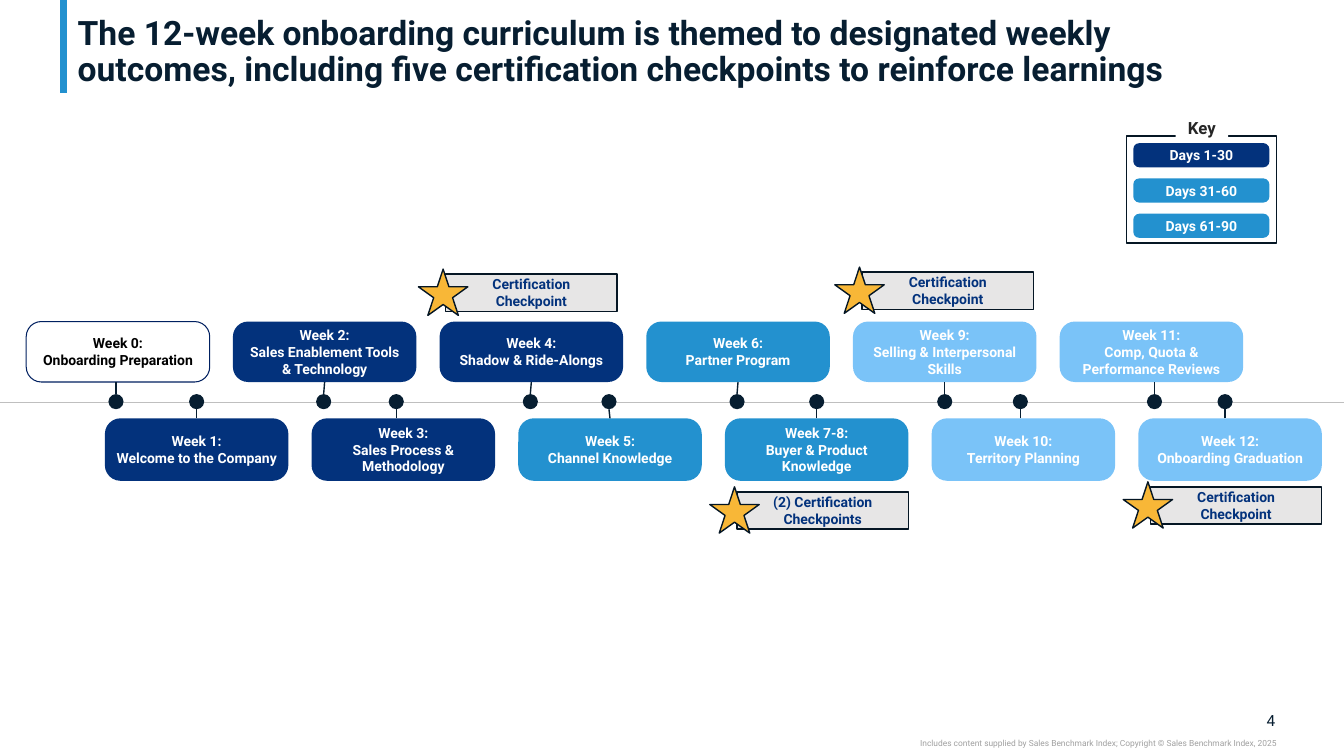
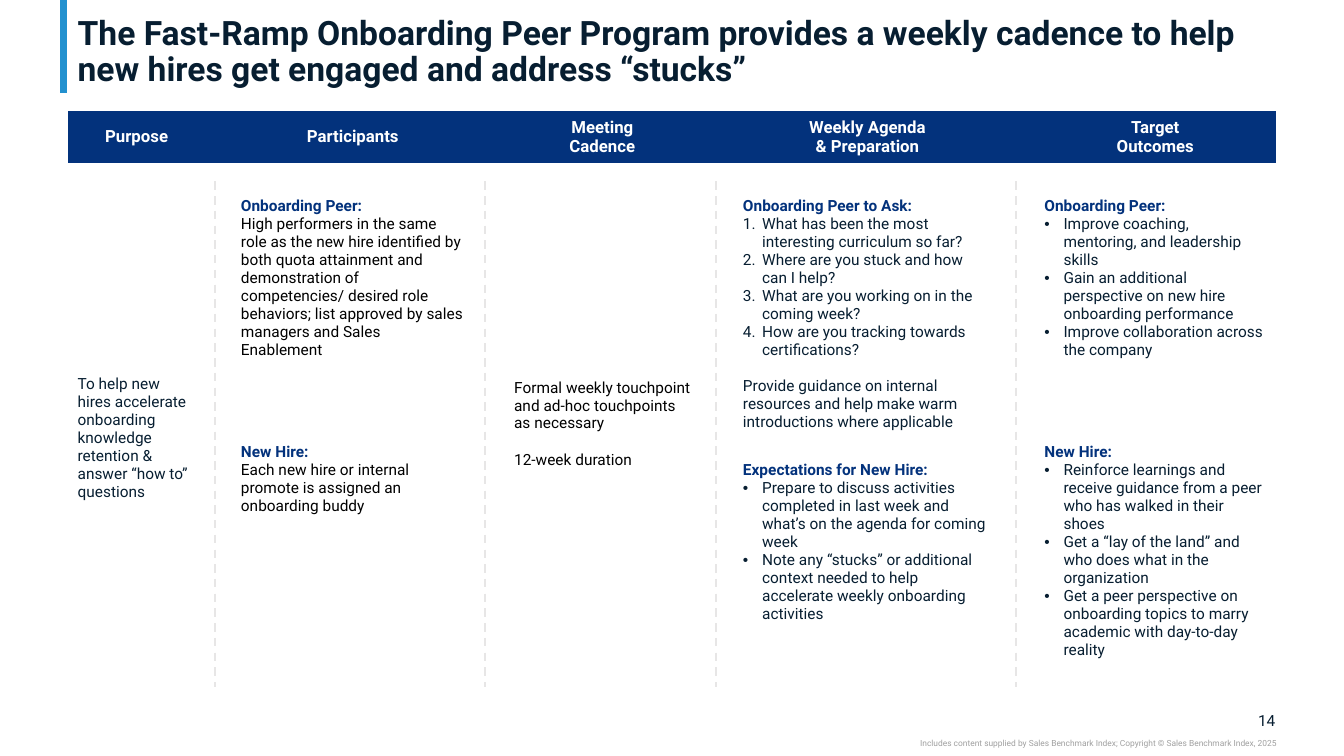
from lxml import etree
from pptx import Presentation
from pptx.dml.color import RGBColor
from pptx.enum.dml import MSO_LINE
from pptx.enum.shapes import MSO_CONNECTOR, MSO_SHAPE
from pptx.enum.text import MSO_ANCHOR, MSO_AUTO_SIZE, PP_ALIGN
from pptx.oxml.ns import qn
from pptx.util import Inches, Pt

NAVY = RGBColor(0x03, 0x32, 0x7C)
BLUE = RGBColor(0x23, 0x91, 0xCF)
SKY = RGBColor(0x7A, 0xC3, 0xF8)
INK = RGBColor(0x07, 0x1E, 0x31)
OUTLINE = RGBColor(0x05, 0x16, 0x24)
CARD_EDGE = RGBColor(0x00, 0x20, 0x60)
CHARCOAL = RGBColor(0x26, 0x26, 0x26)
GOLD = RGBColor(0xF8, 0xB7, 0x37)
PALE = RGBColor(0xE7, 0xE6, 0xE6)
SILVER = RGBColor(0xBF, 0xBF, 0xBF)
GREY = RGBColor(0xA0, 0xA0, 0xA0)
WHITE = RGBColor(0xFF, 0xFF, 0xFF)
BLACK = RGBColor(0x00, 0x00, 0x00)

FONT = "Roboto"
TOP, MIDDLE, BOTTOM = MSO_ANCHOR.TOP, MSO_ANCHOR.MIDDLE, MSO_ANCHOR.BOTTOM
LEFT, CENTER, RIGHT = PP_ALIGN.LEFT, PP_ALIGN.CENTER, PP_ALIGN.RIGHT
RECTANGLE = MSO_SHAPE.RECTANGLE
ROUNDED = MSO_SHAPE.ROUNDED_RECTANGLE
OVAL, STAR = MSO_SHAPE.OVAL, MSO_SHAPE.STAR_5_POINT
STRAIGHT, DASH = MSO_CONNECTOR.STRAIGHT, MSO_LINE.DASH
NO_AUTOFIT = MSO_AUTO_SIZE.NONE

TITLE_ONLY = 5
PLAIN_TABLE = "{2D5ABB26-0587-4C30-8999-92F81FD0307C}"
COPYRIGHT = ("Includes content supplied by Sales Benchmark Index; "
             "Copyright © Sales Benchmark Index, 2025")
DEFAULT_INSETS = (0.1, 0.05)
CARD_INSETS = (0.07, 0.04)

CARD_PITCH, CARD_WIDTH = 2.05, 1.82
DOT_TOP, DOT_SIZE = 3.91, 0.15
UPPER_WEEKS = [
    ("Week 0:\nOnboarding Preparation", None, 1.15),
    ("Week 2:\nSales Enablement Tools & Technology", NAVY, 3.21),
    ("Week 4:\nShadow & Ride-Alongs", NAVY, 5.26),
    ("Week 6:\nPartner Program", BLUE, 7.31),
    ("Week 9:\nSelling & Interpersonal Skills", SKY, 9.37),
    ("Week 11:\nComp, Quota & Performance Reviews", SKY, 11.45),
]
LOWER_WEEKS = [
    ("Week 1:\nWelcome to the Company", NAVY, 1.95),
    ("Week 3:\nSales Process & Methodology", NAVY, 3.93),
    ("Week 5:\nChannel Knowledge", BLUE, 6.04),
    ("Week 7-8:\nBuyer & Product Knowledge", BLUE, 8.1),
    ("Week 10:\nTerritory Planning", SKY, 10.12),
    ("Week 12:\nOnboarding Graduation", SKY, 12.15),
]
CHECKPOINTS = [
    (4.42, 2.72, "Certification Checkpoint"),
    (8.55, 2.7, "Certification Checkpoint"),
    (7.31, 4.88, "(2) Certification Checkpoints"),
    (11.41, 4.83, "Certification Checkpoint"),
]
KEY = [("Days 1-30", NAVY), ("Days 31-60", BLUE), ("Days 61-90", BLUE)]

COLUMN_WIDTHS = [1.37, 0.25, 2.42, 0.29, 1.95, 0.32, 2.67, 0.32, 2.4]
ROW_HEIGHTS = [0.52, 0.29, 2.44, 2.44]
HEADERS = ["Purpose", "Participants", "Meeting\nCadence",
           "Weekly Agenda\n& Preparation", "Target\nOutcomes"]
DIVIDERS = [2.13, 4.81, 7.1, 10.08]
PROGRAM_CELLS = [
    (1, 4, MIDDLE, BLACK, 0.05, [
        ("body", "Formal weekly touchpoint and ad-hoc touchpoints as necessary"),
        ("spaced", "12-week duration")]),
    (2, 0, MIDDLE, INK, 0.05, [
        ("body", "To help new hires accelerate onboarding knowledge retention "
                 "& answer “how to” questions")]),
    (2, 2, TOP, BLACK, 0.05, [
        ("heading", "Onboarding Peer:"),
        ("body", "High performers in the same role as the new hire identified by "
                 "both quota attainment and demonstration of competencies/ desired "
                 "role behaviors; list approved by sales managers and Sales "
                 "Enablement")]),
    (2, 6, TOP, INK, 0.05, [
        ("heading", "Onboarding Peer to Ask:"),
        ("number", "What has been the most interesting curriculum so far?"),
        ("number", "Where are you stuck and how can I help?"),
        ("number", "What are you working on in the coming week?"),
        ("number", "How are you tracking towards certifications?"),
        ("spaced", "Provide guidance on internal resources and help make warm "
                   "introductions where applicable")]),
    (2, 8, TOP, INK, 0.05, [
        ("heading", "Onboarding Peer:"),
        ("bullet", "Improve coaching, mentoring, and leadership skills"),
        ("bullet", "Gain an additional perspective on new hire onboarding "
                   "performance"),
        ("bullet", "Improve collaboration across the company")]),
    (3, 2, TOP, BLACK, 0.05, [
        ("heading", "New Hire:"),
        ("body", "Each new hire or internal promote is assigned an onboarding "
                 "buddy")]),
    (3, 6, TOP, INK, 0.23, [
        ("heading", "Expectations for New Hire:"),
        ("bullet", "Prepare to discuss activities completed in last week and "
                   "what’s on the agenda for coming week"),
        ("bullet", "Note any “stucks” or additional context needed to help "
                   "accelerate weekly onboarding activities")]),
    (3, 8, TOP, INK, 0.05, [
        ("heading", "New Hire:"),
        ("bullet", "Reinforce learnings and receive guidance from a peer who has "
                   "walked in their shoes"),
        ("bullet", "Get a “lay of the land” and who does what in the "
                   "organization"),
        ("bullet", "Get a peer perspective on onboarding topics to marry academic "
                   "with day-to-day reality")]),
]


class SlideBuilder:
    def __init__(self):
        self.deck = Presentation()
        self.deck.slide_width = Inches(13.33)
        self.deck.slide_height = Inches(7.5)
        self.page = None

    def add_page(self, title, number):
        self.page = self.deck.slides.add_slide(self.deck.slide_layouts[TITLE_ONLY])
        self.line((0.63, 0), (0.63, 0.92), BLUE, 5)
        box = self.page.shapes.title
        box.left, box.top = Inches(0.67), Inches(0.04)
        box.width, box.height = Inches(11.99), Inches(0.84)
        self.set_text(box.text_frame, title, 24, INK, True, LEFT, BOTTOM, (0.1, 0))
        box.text_frame.paragraphs[0].line_spacing = 0.9
        self.label(12.32, 7.05, 0.33, 0.19, number, 11, INK, MIDDLE)
        self.label(7.5, 7.32, 5.16, 0.1, COPYRIGHT, 6, GREY, TOP)

    def style(self, paragraph, size, color, bold):
        for span in paragraph.runs:
            span.font.name = FONT
            span.font.size = Pt(size)
            span.font.bold = bold
            span.font.color.rgb = color

    def set_text(self, frame, text, size, color, bold=True, align=CENTER,
                 anchor=MIDDLE, insets=DEFAULT_INSETS):
        frame.text = text
        frame.word_wrap = True
        frame.auto_size = NO_AUTOFIT
        frame.vertical_anchor = anchor
        frame.margin_left = frame.margin_right = Inches(insets[0])
        frame.margin_top = frame.margin_bottom = Inches(insets[1])
        for para in frame.paragraphs:
            para.alignment = align
            self.style(para, size, color, bold)

    def label(self, left, top, width, height, text, size, color, anchor):
        box = self.page.shapes.add_textbox(
            Inches(left), Inches(top), Inches(width), Inches(height))
        self.set_text(box.text_frame, text, size, color, False, RIGHT, anchor, (0, 0))

    def shape(self, kind, left, top, width, height, fill=None, edge=None,
              edge_width=1, corner=None):
        shape = self.page.shapes.add_shape(
            kind, Inches(left), Inches(top), Inches(width), Inches(height))
        shape.shadow.inherit = False
        if fill is None:
            shape.fill.background()
        else:
            shape.fill.solid()
            shape.fill.fore_color.rgb = fill
        if edge is None:
            shape.line.fill.background()
        else:
            shape.line.color.rgb = edge
            shape.line.width = Pt(edge_width)
        if corner is not None:
            shape.adjustments[0] = corner
        return shape

    def line(self, start, end, color, width, dash=None):
        points = [Inches(value) for value in (*start, *end)]
        line = self.page.shapes.add_connector(STRAIGHT, *points)
        line.line.color.rgb = color
        line.line.width = Pt(width)
        if dash is not None:
            line.line.dash_style = dash
        etree.SubElement(line._element.spPr, qn("a:effectLst"))
        return line

    def card(self, left, top, width, height, text, fill):
        edge, color = (CARD_EDGE, BLACK) if fill is None else (None, WHITE)
        card = self.shape(ROUNDED, left, top, width, height, fill, edge, 0.75, 0.25)
        self.set_text(card.text_frame, text, 10, color, insets=CARD_INSETS)
        return card

    def week_row(self, weeks, left, top, height, upper):
        for index, (text, fill, dot_x) in enumerate(weeks):
            card_left = left + index * CARD_PITCH
            card = self.card(card_left, top, CARD_WIDTH, height, text, fill)
            dot = self.shape(OVAL, dot_x - DOT_SIZE / 2, DOT_TOP,
                             DOT_SIZE, DOT_SIZE, INK)
            card_edge = top + height if upper else top
            dot_edge = DOT_TOP if upper else DOT_TOP + DOT_SIZE
            stem = self.line((dot_x, card_edge), (dot_x, dot_edge), INK, 1)
            if abs(dot_x - card_left - CARD_WIDTH / 2) < 0.02:
                stem.begin_connect(card, 2 if upper else 0)
            if upper:
                stem.end_connect(dot, 0)

    def checkpoint(self, left, top, text):
        box = self.shape(RECTANGLE, left, top, 1.7, 0.37, PALE, OUTLINE)
        self.set_text(box.text_frame, text, 10, NAVY)
        self.shape(STAR, left - 0.27, top - 0.05, 0.49, 0.46, GOLD, OUTLINE)

    def key(self, entries):
        self.shape(RECTANGLE, 11.17, 1.35, 1.49, 1.06, edge=OUTLINE)
        heading = self.shape(RECTANGLE, 11.66, 1.12, 0.52, 0.3, WHITE)
        self.set_text(heading.text_frame, "Key", 12, CHARCOAL, anchor=TOP)
        for index, (text, fill) in enumerate(entries):
            self.card(11.24, 1.42 + index * 0.35, 1.35, 0.24, text, fill)

    def table(self, left, top, widths, heights):
        table = self.page.shapes.add_table(
            len(heights), len(widths), Inches(left), Inches(top),
            Inches(sum(widths)), Inches(sum(heights))).table
        table._tbl.tblPr.find(qn("a:tableStyleId")).text = PLAIN_TABLE
        table.first_row = table.horz_banding = False
        for column, width in zip(table.columns, widths):
            column.width = Inches(width)
        for row, height in zip(table.rows, heights):
            row.height = Inches(height)
        for cell in table.iter_cells():
            cell.fill.background()
        return table

    def header_row(self, table, headers):
        for column in range(len(table.columns)):
            cell = table.cell(0, column)
            cell.fill.solid()
            cell.fill.fore_color.rgb = NAVY
            if column % 2 == 0:
                cell.text_frame.text = headers[column // 2]
                cell.vertical_anchor = MIDDLE
                for para in cell.text_frame.paragraphs:
                    para.alignment = CENTER
                    self.style(para, 12, WHITE, True)

    def fill_cell(self, cell, anchor, color, margin_top, entries):
        cell.vertical_anchor = anchor
        cell.margin_top = Inches(margin_top)
        frame = cell.text_frame
        frame.text = "\n".join(text for kind, text in entries)
        for para, (kind, text) in zip(frame.paragraphs, entries):
            if kind in ("bullet", "number"):
                self.mark(para, kind)
            if kind == "spaced":
                para.space_before = Pt(13)
            heading = kind == "heading"
            self.style(para, 11, NAVY if heading else color, heading)

    def mark(self, para, kind):
        properties = para._p.get_or_add_pPr()
        properties.set("marL", str(Inches(0.19)))
        properties.set("indent", str(-Inches(0.19)))
        if kind == "number":
            etree.SubElement(properties, qn("a:buAutoNum"), type="arabicPeriod")
        else:
            etree.SubElement(properties, qn("a:buFont"), typeface="Arial")
            etree.SubElement(properties, qn("a:buChar"), char="•")

    def shrink_empty_cells(self, table):
        for cell in table.iter_cells():
            if not cell.text_frame.text:
                para = cell.text_frame.paragraphs[0]
                etree.SubElement(para._p, qn("a:endParaRPr"), sz="1100")


def build_curriculum(builder):
    builder.add_page("The 12-week onboarding curriculum is themed to designated weekly "
                     "outcomes, including five certification checkpoints to reinforce "
                     "learnings", "4")
    builder.line((0, 3.99), (13.33, 3.99), SILVER, 0.75)
    builder.week_row(UPPER_WEEKS, 0.26, 3.19, 0.6, True)
    builder.week_row(LOWER_WEEKS, 1.04, 4.15, 0.62, False)
    for left, top, text in CHECKPOINTS:
        builder.checkpoint(left, top, text)
    builder.key(KEY)


def build_peer_program(builder):
    builder.add_page("The Fast-Ramp Onboarding Peer Program provides a weekly cadence "
                     "to help new hires get engaged and address “stucks”", "14")
    table = builder.table(0.67, 1.1, COLUMN_WIDTHS, ROW_HEIGHTS)
    builder.header_row(table, HEADERS)
    table.cell(1, 4).merge(table.cell(3, 4))
    table.cell(2, 0).merge(table.cell(3, 0))
    for row, column, *content in PROGRAM_CELLS:
        builder.fill_cell(table.cell(row, column), *content)
    builder.shrink_empty_cells(table)
    for x in DIVIDERS:
        builder.line((x, 1.8), (x, 6.82), PALE, 1.5, DASH)


def main():
    builder = SlideBuilder()
    build_curriculum(builder)
    build_peer_program(builder)
    builder.deck.save("out.pptx")


if __name__ == "__main__":
    main()
